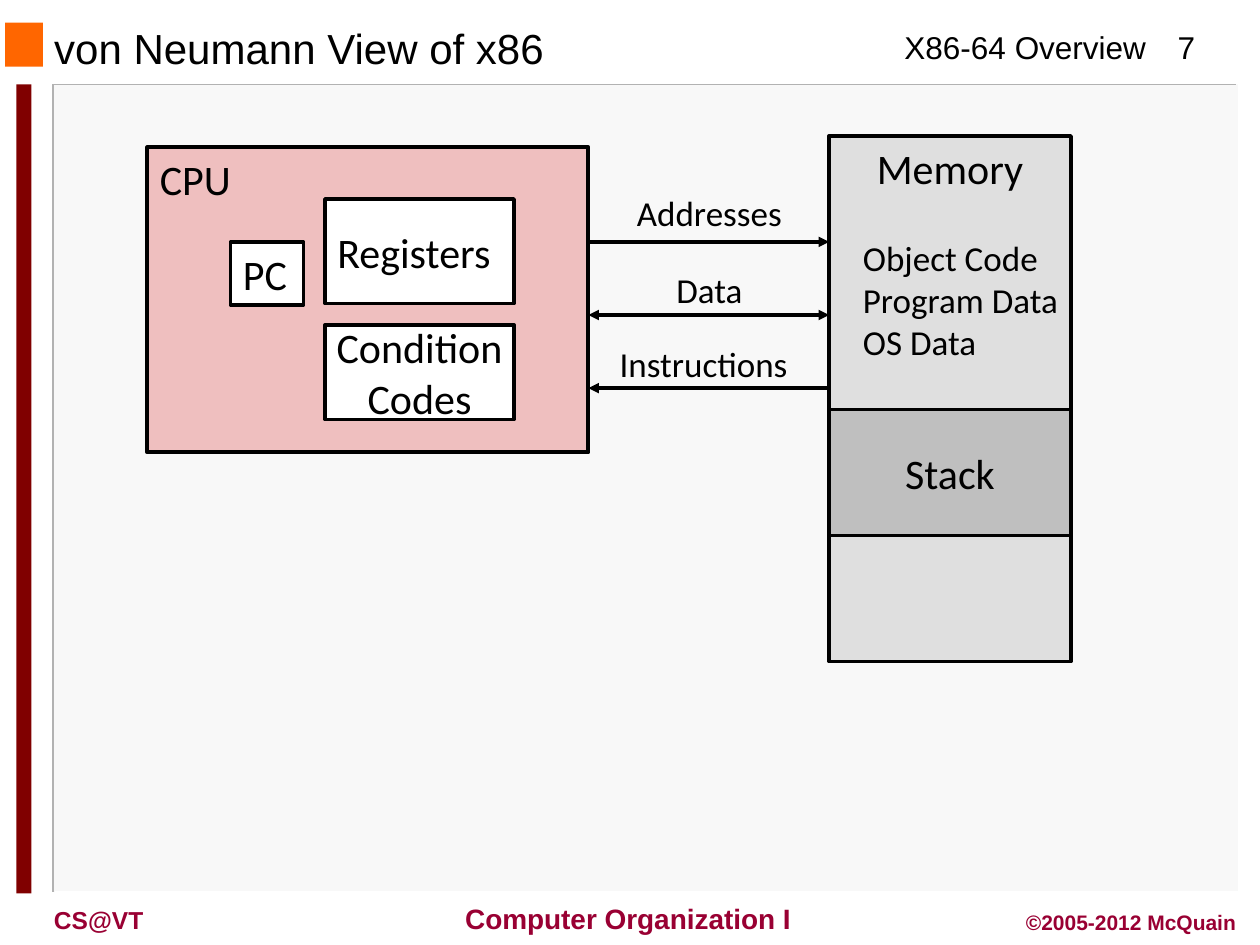
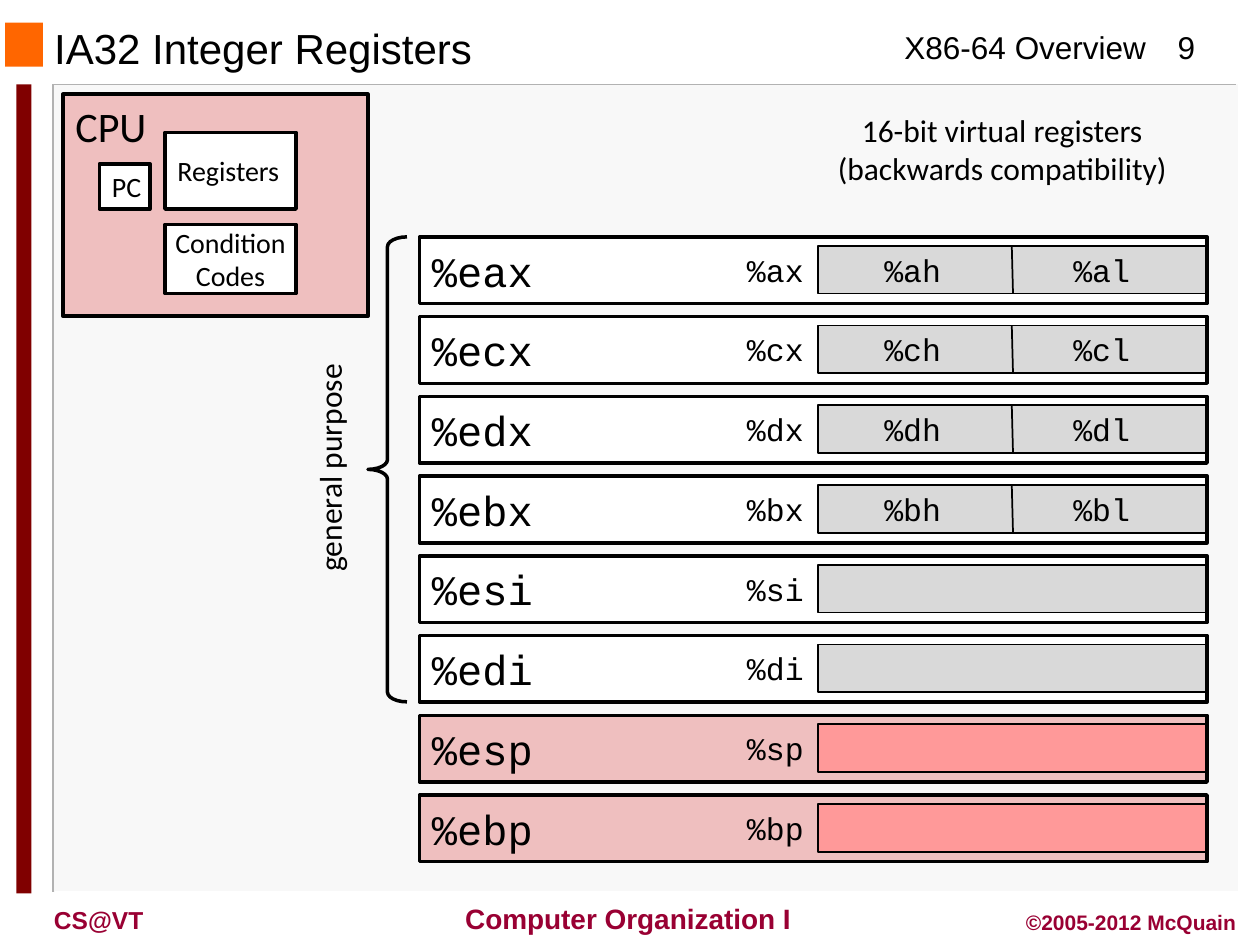
"""Builds two slides on the x86 processor view and its IA32 registers."""
import pptx
import pptx.dml.color
import pptx.enum.shapes
import pptx.enum.text
import pptx.oxml.ns
import pptx.util
import lxml.etree

Inches = pptx.util.Inches
Color = pptx.dml.color.RGBColor.from_string
Shape = pptx.enum.shapes.MSO_SHAPE
Align = pptx.enum.text.PP_ALIGN
Anchor = pptx.enum.text.MSO_ANCHOR


class Theme:
    black, white, panel, edge = "000000", "FFFFFF", "F8F8F8", "B2B2B2"
    orange, maroon, wine = "FF6600", "800000", "990033"
    pink, rose = "EFBFBF", "FF9999"
    light, mid, grey = "DFDFDF", "BFBFBF", "D9D9D9"
    head, body, code = "Arial", "Calibri", "Courier New"
    big, list, note, small, foot, tiny = 24, 20, 18, 16, 14, 12
    thick, thin = 2, 1


def add(slide, text, x, y, w, h, item=None, kind=Shape.RECTANGLE, fill=None, edge=None,
        width=Theme.thick, size=Theme.big, font=Theme.body, color=Theme.black, bold=False,
        align=Align.LEFT, anchor=Anchor.TOP, wrap=False, turn=0):
    """Place a shape, text box or given item, and format its text."""
    place = [Inches(n) for n in (x, y, w, h)]
    if item is not None:
        item.left, item.top, item.width, item.height = place
    elif fill or edge:
        item = slide.shapes.add_shape(kind, *place)
        item.shadow.inherit = False
        if fill:
            item.fill.solid()
            item.fill.fore_color.rgb = Color(fill)
        else:
            item.fill.background()
        if edge:
            item.line.color.rgb = Color(edge)
            item.line.width = pptx.util.Pt(width)
        else:
            item.line.fill.background()
    else:
        item = slide.shapes.add_textbox(*place)
    item.rotation = turn
    if text:
        frame = item.text_frame
        frame.text = text
        frame.word_wrap = wrap
        frame.vertical_anchor = anchor
        frame.margin_left = frame.margin_right = Inches(0.1)
        frame.margin_top = frame.margin_bottom = Inches(0.05)
        for para in frame.paragraphs:
            para.alignment = align
            for run in para.runs:
                run.font.name, run.font.size = font, pptx.util.Pt(size)
                run.font.bold, run.font.color.rgb = bold, Color(color)
    return item


def rule(slide, x, y, x2, y2, color=Theme.black, width=Theme.thin, ends=()):
    """Draw a straight line with arrowheads at the named ends."""
    item = slide.shapes.add_connector(
        pptx.enum.shapes.MSO_CONNECTOR.STRAIGHT, *[Inches(n) for n in (x, y, x2, y2)])
    item.line.color.rgb = Color(color)
    item.line.width = pptx.util.Pt(width)
    for end in ends:
        lxml.etree.SubElement(item.line._get_or_add_ln(), pptx.oxml.ns.qn("a:" + end), type="triangle")
    lxml.etree.SubElement(item._element.spPr, pptx.oxml.ns.qn("a:effectLst"))


deck = pptx.Presentation()
deck.slide_width, deck.slide_height = Inches(10), Inches(7.5)

pages = [
    ("von Neumann View of x86", "7", Theme.big,
     [(1.17, 1.17, 3.5, 2.42), (1.83, 1.92, 0.58, 0.5),
      (2.58, 1.58, 1.5, 0.83), (2.58, 2.58, 1.5, 0.75)]),
    ("IA32 Integer Registers", "9", Theme.small,
     [(0.5, 0.75, 2.42, 1.76), (0.79, 1.3, 0.4, 0.36),
      (1.31, 1.05, 1.04, 0.61), (1.31, 1.78, 1.04, 0.55)]),
]
bands = [
    (0.43, 0.67, 9.4, 6.41, Theme.panel),
    (0.04, 0.18, 0.3, 0.35, Theme.orange),
    (0.13, 0.67, 0.12, 6.42, Theme.maroon),
]
rims = [
    (0.42, 0.67, 9.81, 0.67, Theme.edge),
    (0.42, 0.67, 0.42, 7.08, Theme.edge),
    (9.83, 0.67, 9.83, 7.08, Theme.white),
    (0.44, 7.08, 9.83, 7.08, Theme.white),
]
feet = [
    ("Computer Organization I", 3.53, 7.11, 2.91, 0.37, Theme.small, Align.CENTER),
    ("CS@VT", 0.33, 7.13, 1.5, 0.33, Theme.foot, Align.LEFT),
    ("©2005-2012 McQuain", 7.83, 7.17, 2.08, 0.3, Theme.tiny, Align.RIGHT),
]
parts = [("PC", Align.LEFT), ("Registers", Align.LEFT), ("Condition\nCodes", Align.CENTER)]

slides = []
for title, number, size, (cpu, *cells) in pages:
    slide = deck.slides.add_slide(deck.slide_layouts[5])
    slides.append(slide)
    for *place, fill in bands:
        add(slide, "", *place, fill=fill)
    for *ends, color in rims:
        rule(slide, *ends, color=color)
    add(slide, title, 0.33, 0.19, 6.33, 0.38, item=slide.shapes.title,
        font=Theme.head, anchor=Anchor.MIDDLE, wrap=True)
    add(slide, "X86-64 Overview", 7.08, 0.17, 2.15, 0.4, size=Theme.note, font=Theme.head)
    add(slide, number, 9.08, 0.17, 0.67, 0.4, size=Theme.note, font=Theme.head,
        align=Align.CENTER, wrap=True)
    for text, *place, points, align in feet:
        add(slide, text, *place, size=points, font=Theme.head, color=Theme.wine,
            bold=True, align=align, wrap=True)
    add(slide, "CPU", *cpu, fill=Theme.pink, edge=Theme.black, width=2.25, wrap=True)
    for (text, align), place in zip(parts, cells):
        add(slide, text, *place, fill=Theme.white, edge=Theme.black, size=size,
            align=align, anchor=Anchor.MIDDLE)

view, regs = slides

add(view, "Memory", 6.58, 1.08, 1.92, 4.17, fill=Theme.light, edge=Theme.black,
    align=Align.CENTER)
add(view, "Object Code\nProgram Data\nOS Data", 6.75, 1.83, 1.92, 1.11,
    size=Theme.list, wrap=True)
add(view, "Stack", 6.58, 3.25, 1.92, 1, fill=Theme.mid, edge=Theme.black,
    align=Align.CENTER, anchor=Anchor.MIDDLE)
buses = [
    ("Addresses", 1.47, 1.92, 1.92, ["tailEnd"]),
    ("Data", 2.08, 1.92, 2.5, ["headEnd", "tailEnd"]),
    ("Instructions", 2.67, 1.83, 3.08, ["headEnd"]),
]
for text, top, wide, y, ends in buses:
    rule(view, 4.67, y, 6.58, y, width=Theme.thick, ends=ends)
    add(view, text, 4.67, top, wide, 0.43, size=Theme.list, align=Align.CENTER, wrap=True)

names = ["ax", "cx", "dx", "bx", "si", "di", "sp", "bp"]
mono = dict(size=Theme.note, font=Theme.code)
for row, name in enumerate(names):
    y = 1.88 + row * 4.43 / 7
    stack = name in ("sp", "bp")
    add(regs, "%e" + name, 3.33, y, 6.25, 0.53, fill=Theme.pink if stack else Theme.white,
        edge=Theme.black, font=Theme.code, anchor=Anchor.MIDDLE)
    add(regs, "", 6.49, y + 0.07, 3.08, 0.38, fill=Theme.rose if stack else Theme.grey,
        edge=Theme.black, width=Theme.thin)
    add(regs, "%" + name, 5.83, y + 0.06, 0.65, 0.4, **mono)
    if name.endswith("x"):
        rule(regs, 8.03, y + 0.07, 8.04, y + 0.45)
        for half, x in (("h", 6.92), ("l", 8.42)):
            add(regs, "%" + name[0] + half, x, y + 0.06, 0.65, 0.4, **mono)

add(regs, "16-bit virtual registers\n(backwards compatibility)", 6.5, 0.83, 2.91, 0.71,
    size=Theme.note, align=Align.CENTER)
brace = add(regs, "", 2.92, 1.88, 0.31, 3.69, kind=Shape.RIGHT_BRACE, edge=Theme.black, turn=180)
brace.adjustments[0], brace.adjustments[1] = 0.25, 0.5
add(regs, "general purpose", 1.67, 3.49, 1.89, 0.4, size=Theme.note, turn=270)

deck.save("out.pptx")
